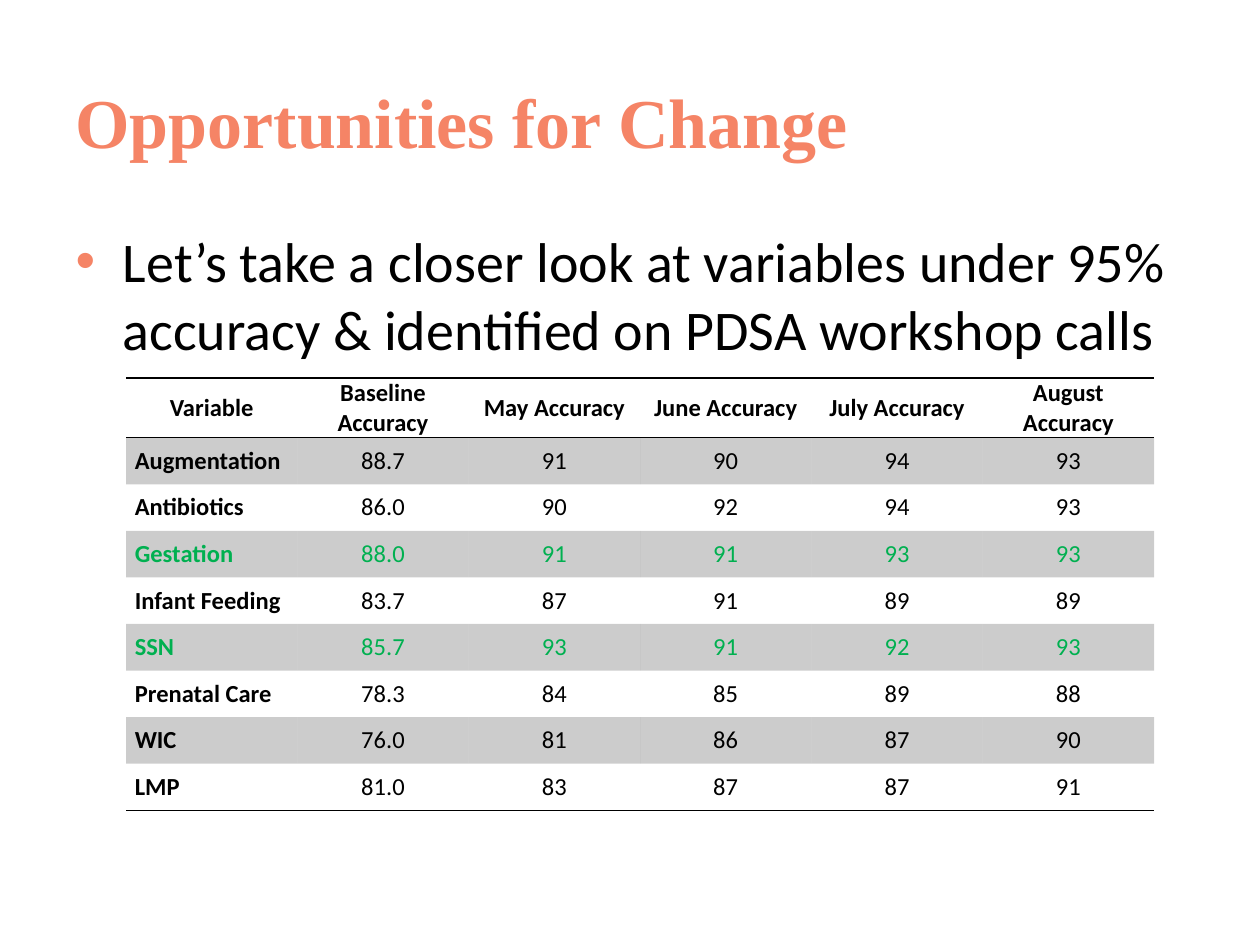
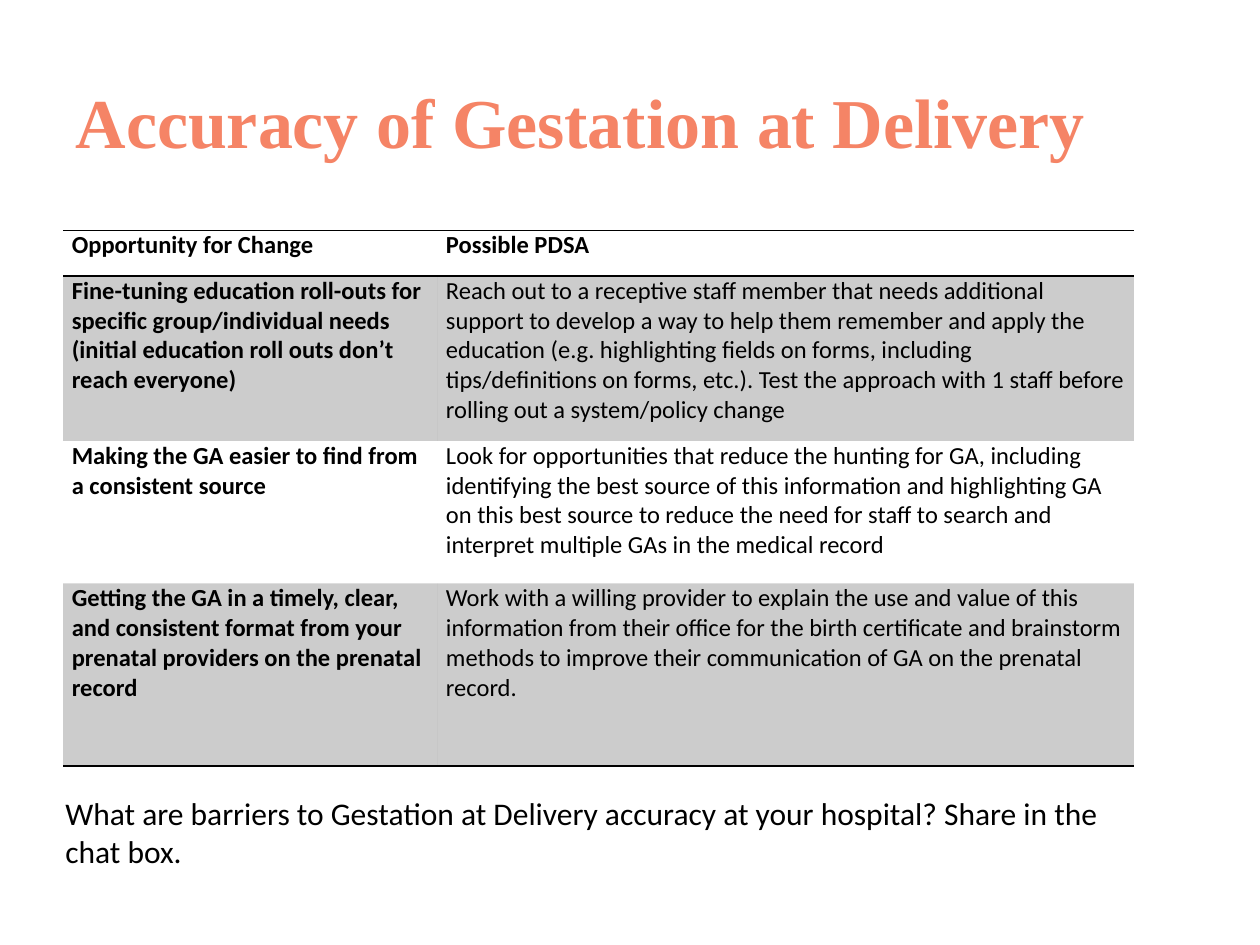
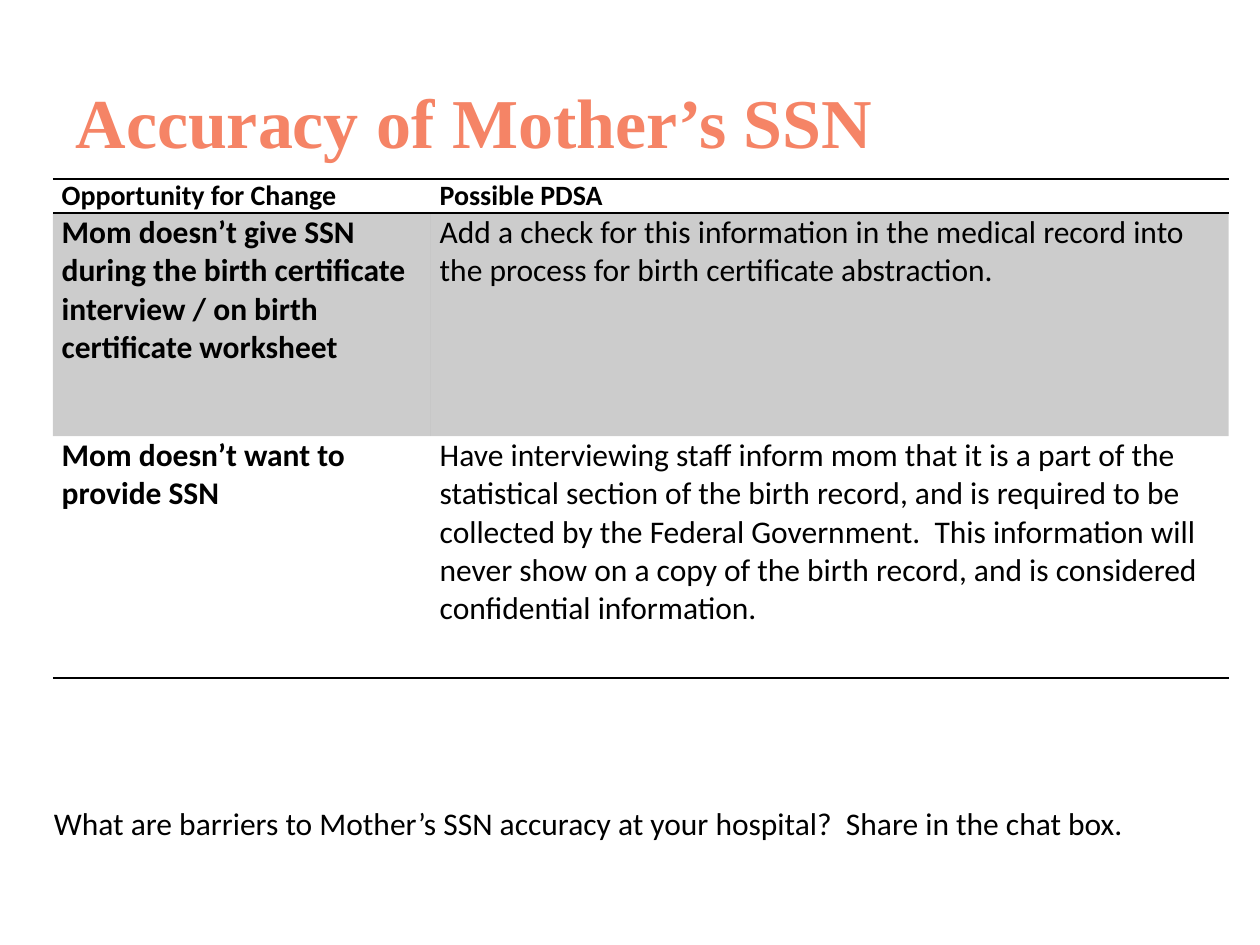
from lxml import etree
from pptx import Presentation
from pptx import util as u
from pptx.dml.color import RGBColor
from pptx.enum import text
from pptx.oxml.ns import qn

CORAL = RGBColor(0xF5, 0x84, 0x66)
BLACK = RGBColor(0, 0, 0)
GREEN = RGBColor(0, 0xB0, 0x50)
HEADING_FONT = "Times New Roman"
BODY_FONT = "Calibri"
BAND_OPACITY = 20
PLAIN_TABLE_STYLE = "{2D5ABB26-0587-4C30-8999-92F81FD0307C}"
TITLE_ONLY, TITLE_AND_BODY = 5, 1

ACCURACY_HEADER = ["Variable"] + [
    f"{period} Accuracy" for period in ("Baseline", "May", "June", "July", "August")
]
ACCURACY = [
    ("Augmentation", "88.7", "91", "90", "94", "93"),
    ("Antibiotics", "86.0", "90", "92", "94", "93"),
    ("Gestation", "88.0", "91", "91", "93", "93"),
    ("Infant Feeding", "83.7", "87", "91", "89", "89"),
    ("SSN", "85.7", "93", "91", "92", "93"),
    ("Prenatal Care", "78.3", "84", "85", "89", "88"),
    ("WIC", "76.0", "81", "86", "87", "90"),
    ("LMP", "81.0", "83", "87", "87", "91"),
]
HIGHLIGHTED = ("Gestation", "SSN")

PDSA_HEADER = ("Opportunity for Change", "Possible PDSA")
GESTATION_PDSA = [
    (
        "Fine-tuning education roll-outs for specific group/individual needs "
        "(initial education roll outs don’t reach everyone)",
        "Reach out to a receptive staff member that needs additional support to "
        "develop a way to help them remember and apply the education (e.g. "
        "highlighting fields on forms, including tips/definitions on forms, etc.). "
        "Test the approach with 1 staff before rolling out a system/policy change",
    ),
    (
        "Making the GA easier to find from a consistent source",
        "Look for opportunities that reduce the hunting for GA, including "
        "identifying the best source of this information and highlighting GA on "
        "this best source to reduce the need for staff to search and interpret "
        "multiple GAs in the medical record",
    ),
    (
        "Getting the GA in a timely, clear, and consistent format from your "
        "prenatal providers on the prenatal record",
        "Work with a willing provider to explain the use and value of this "
        "information from their office for the birth certificate and brainstorm "
        "methods to improve their communication of GA on the prenatal record.",
    ),
]
SSN_PDSA = [
    (
        "Mom doesn’t give SSN during the birth certificate interview / on birth "
        "certificate worksheet",
        "Add a check for this information in the medical record into the process "
        "for birth certificate abstraction.",
    ),
    (
        "Mom doesn’t want to provide SSN",
        "Have interviewing staff inform mom that it is a part of the statistical "
        "section of the birth record, and is required to be collected by the "
        "Federal Government.  This information will never show on a copy of the "
        "birth record, and is considered confidential information.",
    ),
]


def place(part, left, top, width, height):
    part.left, part.top = u.Inches(left), u.Inches(top)
    part.width, part.height = u.Inches(width), u.Inches(height)


def write(frame, words, size, color=BLACK, font=BODY_FONT, bold=False,
          align=text.PP_ALIGN.LEFT):
    frame.text = words
    paragraph = frame.paragraphs[0]
    paragraph.alignment = align
    paragraph.font.name = font
    paragraph.font.size = u.Pt(size)
    paragraph.font.bold = bold
    paragraph.font.color.rgb = color
    return paragraph


def add_titled_slide(deck, heading, layout=TITLE_ONLY):
    slide = deck.slides.add_slide(deck.slide_layouts[layout])
    title = slide.shapes.title
    place(title, 0.5, 0.33, 9, 1.25)
    write(title.text_frame, heading, 40, CORAL, HEADING_FONT, bold=True)
    return slide


def add_bullet(slide, words):
    body = slide.placeholders[1]
    place(body, 0.5, 1.75, 9, 4.95)
    properties = write(body.text_frame, words, 32)._p.get_or_add_pPr()
    bullet_color = etree.Element(qn("a:buClr"))
    etree.SubElement(bullet_color, qn("a:srgbClr"), val=str(CORAL))
    properties.insert(0, bullet_color)


def add_question(slide, words, left, top, width, height):
    box = slide.shapes.add_textbox(*map(u.Inches, (left, top, width, height)))
    box.text_frame.word_wrap = True
    write(box.text_frame, words, 18)


def shade(cell):
    cell.fill.solid()
    cell.fill.fore_color.rgb = BLACK
    color = cell._tc.tcPr.find(".//" + qn("a:srgbClr"))
    etree.SubElement(color, qn("a:alpha"), val=str(BAND_OPACITY * 1000))


def rule(cell, *sides):
    for position, side in enumerate(sides):
        line = etree.Element(qn(f"a:ln{side}"), w=str(u.Pt(1)))
        fill = etree.SubElement(line, qn("a:solidFill"))
        etree.SubElement(fill, qn("a:srgbClr"), val=str(BLACK))
        cell._tc.get_or_add_tcPr().insert(position, line)


def add_banded_table(slide, header, records, left, top, widths, heights, size,
                     header_size=None, centered=False):
    rows = [header, *records]
    frame = slide.shapes.add_table(
        len(rows), len(header), u.Inches(left), u.Inches(top),
        u.Inches(sum(widths)), u.Inches(sum(heights)))
    table = frame.table
    table._tbl.tblPr.find(qn("a:tableStyleId")).text = PLAIN_TABLE_STYLE
    for column, width in zip(table.columns, widths):
        column.width = u.Inches(width)
    for row, height in zip(table.rows, heights):
        row.height = u.Inches(height)

    for r, values in enumerate(rows):
        color = GREEN if values[0] in HIGHLIGHTED else BLACK
        for c, value in enumerate(values):
            cell = table.cell(r, c)
            cell.margin_left = cell.margin_right = u.Inches(0.07)
            cell.margin_top = cell.margin_bottom = 0
            middle = centered and (r == 0 or c > 0)
            if centered:
                cell.vertical_anchor = text.MSO_ANCHOR.MIDDLE
            write(cell.text_frame, value,
                  header_size if r == 0 and header_size else size, color,
                  bold=r == 0 or c == 0,
                  align=text.PP_ALIGN.CENTER if middle else text.PP_ALIGN.LEFT)
            if r % 2:
                shade(cell)
            else:
                cell.fill.background()
            if r == 0:
                rule(cell, "T", "B")
            elif r == len(records):
                rule(cell, "B")


def main():
    deck = Presentation()
    deck.slide_width, deck.slide_height = u.Inches(10), u.Inches(7.5)

    overview = add_titled_slide(deck, "Opportunities for Change", TITLE_AND_BODY)
    add_bullet(overview, "Let’s take a closer look at variables under 95% accuracy "
                         "& identified on PDSA workshop calls")
    add_banded_table(overview, ACCURACY_HEADER, ACCURACY, 1, 3,
                     [1.36] * len(ACCURACY_HEADER),
                     [0.47] + [0.37] * len(ACCURACY), 14, centered=True)

    gestation = add_titled_slide(deck, "Accuracy of Gestation at Delivery")
    add_banded_table(gestation, PDSA_HEADER, GESTATION_PDSA, 0.5, 1.83,
                     [2.97, 5.53], [0.36, 1.31, 1.13, 1.45], 14)
    add_question(gestation, "What are barriers to Gestation at Delivery accuracy at "
                            "your hospital? Share in the chat box.",
                 0.42, 6.25, 8.42, 0.71)

    ssn = add_titled_slide(deck, "Accuracy of Mother’s SSN")
    add_banded_table(ssn, PDSA_HEADER, SSN_PDSA, 0.42, 1.42,
                     [3, 6.33], [0.27, 1.77, 1.92], 18, header_size=16)
    add_question(ssn, "What are barriers to Mother’s SSN accuracy at your hospital?  "
                      "Share in the chat box.", 0.33, 6.33, 9.17, 0.4)

    deck.save("out.pptx")


if __name__ == "__main__":
    main()
